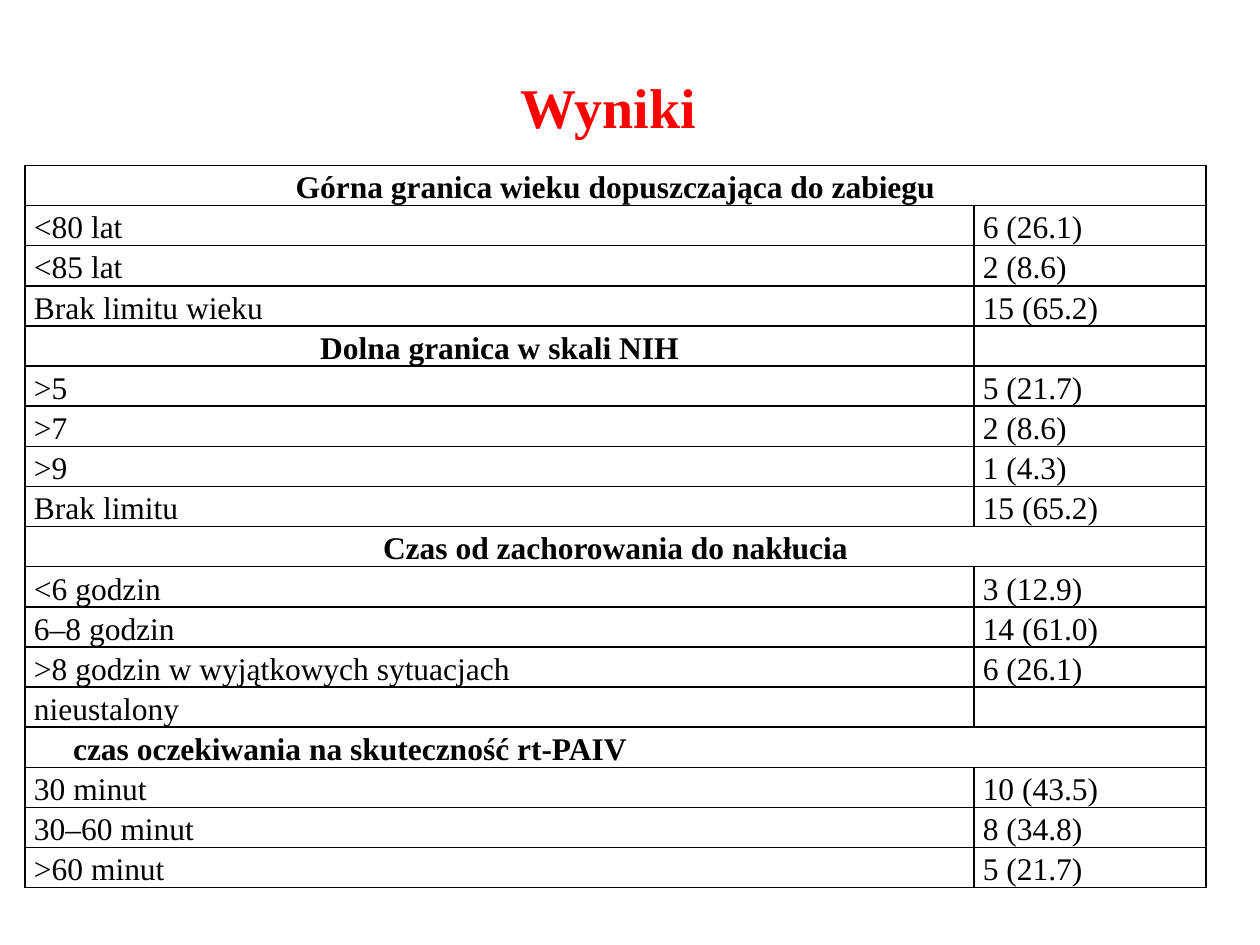
from lxml import etree
from pptx import Presentation
from pptx.dml.color import RGBColor
from pptx.enum.text import MSO_ANCHOR, MSO_AUTO_SIZE, PP_ALIGN
from pptx.oxml.ns import qn
from pptx.util import Inches, Pt

CENTER, LEFT = PP_ALIGN.CENTER, PP_ALIGN.LEFT
TOP = MSO_ANCHOR.TOP
NO_AUTOFIT = MSO_AUTO_SIZE.NONE
TITLE_ONLY = 5
FONT = "Times New Roman"
COLORS = {"title": "FF0000", "text": "000000", "border": "000000", "cell": "FFFFFF"}

COLUMN_WIDTHS = (7.53, 1.84)
ROW_HEIGHT = 0.3
CELL_MARGIN = 0.07
HEADING_INDENT = 0.31

SECTIONS = [
    ("Górna granica wieku dopuszczająca do zabiegu", CENTER, True, [
        ("<80 lat", "6 (26.1)"),
        ("<85 lat", "2 (8.6)"),
        ("Brak limitu wieku", "15 (65.2)"),
    ]),
    ("Dolna granica w skali NIH", CENTER, False, [
        (">5", "5 (21.7)"),
        (">7", "2 (8.6)"),
        (">9", "1 (4.3)"),
        ("Brak limitu", "15 (65.2)"),
    ]),
    ("Czas od zachorowania do nakłucia", CENTER, True, [
        ("<6 godzin", "3 (12.9)"),
        ("6–8 godzin", "14 (61.0)"),
        (">8 godzin w wyjątkowych sytuacjach", "6 (26.1)"),
        ("nieustalony", ""),
    ]),
    ("czas oczekiwania na skuteczność rt-PAIV", LEFT, True, [
        ("30 minut", "10 (43.5)"),
        ("30–60 minut", "8 (34.8)"),
        (">60 minut", "5 (21.7)"),
    ]),
]


def format_font(font, size, color, bold):
    font.name = FONT
    font.size = Pt(size)
    font.bold = bold
    font.color.rgb = RGBColor.from_string(COLORS[color])


def add_title(deck, page, text):
    box = page.shapes.title
    box.left, box.top = int(deck.slide_width * 0.403), int(deck.slide_height * 0.07)
    box.width, box.height = int(deck.slide_width * 0.161), int(deck.slide_height * 0.085)
    frame = box.text_frame
    frame.text = text
    frame.word_wrap = False
    frame.auto_size = NO_AUTOFIT
    frame.vertical_anchor = TOP
    para = frame.paragraphs[0]
    para.alignment = LEFT
    format_font(para.runs[0].font, 32, "title", True)


def add_borders(cell):
    properties = cell._tc.get_or_add_tcPr()
    for position, side in enumerate(("lnL", "lnR", "lnT", "lnB")):
        line = etree.Element(qn(f"a:{side}"), w=str(Pt(1)))
        fill = etree.SubElement(line, qn("a:solidFill"))
        etree.SubElement(fill, qn("a:srgbClr"), val=COLORS["border"])
        properties.insert(position, line)


def format_cell(cell):
    cell.margin_left = cell.margin_right = Inches(CELL_MARGIN)
    cell.margin_top = cell.margin_bottom = 0
    cell.fill.solid()
    cell.fill.fore_color.rgb = RGBColor.from_string(COLORS["cell"])
    add_borders(cell)


def write_cell(cell, text, bold=False, alignment=LEFT):
    if not text:
        return
    cell.text = text
    para = cell.text_frame.paragraphs[0]
    para.alignment = alignment
    para.line_spacing = 1.15
    format_font(para.runs[0].font, 18, "text", bold)


def write_heading(table, row, text, alignment, spans):
    cell = table.cell(row, 0)
    if spans:
        cell.merge(table.cell(row, 1))
    write_cell(cell, text, True, alignment)
    if alignment == LEFT:
        cell.margin_left = Inches(CELL_MARGIN + HEADING_INDENT)


def add_results_table(deck, page):
    row_count = sum(1 + len(entries) for *_, entries in SECTIONS)
    table = page.shapes.add_table(
        row_count, len(COLUMN_WIDTHS),
        int(deck.slide_width * 0.02), int(deck.slide_height * 0.175),
        Inches(sum(COLUMN_WIDTHS)), Inches(ROW_HEIGHT * row_count),
    ).table
    table.first_row = table.horz_banding = False
    for column, width in zip(table.columns, COLUMN_WIDTHS):
        column.width = Inches(width)
    for row in table.rows:
        row.height = Inches(ROW_HEIGHT)
        for cell in row.cells:
            format_cell(cell)
    index = 0
    for heading, alignment, spans, entries in SECTIONS:
        write_heading(table, index, heading, alignment, spans)
        for index, entry in enumerate(entries, index + 1):
            for column, text in enumerate(entry):
                write_cell(table.cell(index, column), text)
        index += 1


def main():
    deck = Presentation()
    deck.slide_width, deck.slide_height = Inches(10), Inches(7.5)
    page = deck.slides.add_slide(deck.slide_layouts[TITLE_ONLY])
    add_title(deck, page, "Wyniki")
    add_results_table(deck, page)
    deck.save("out.pptx")


if __name__ == "__main__":
    main()
